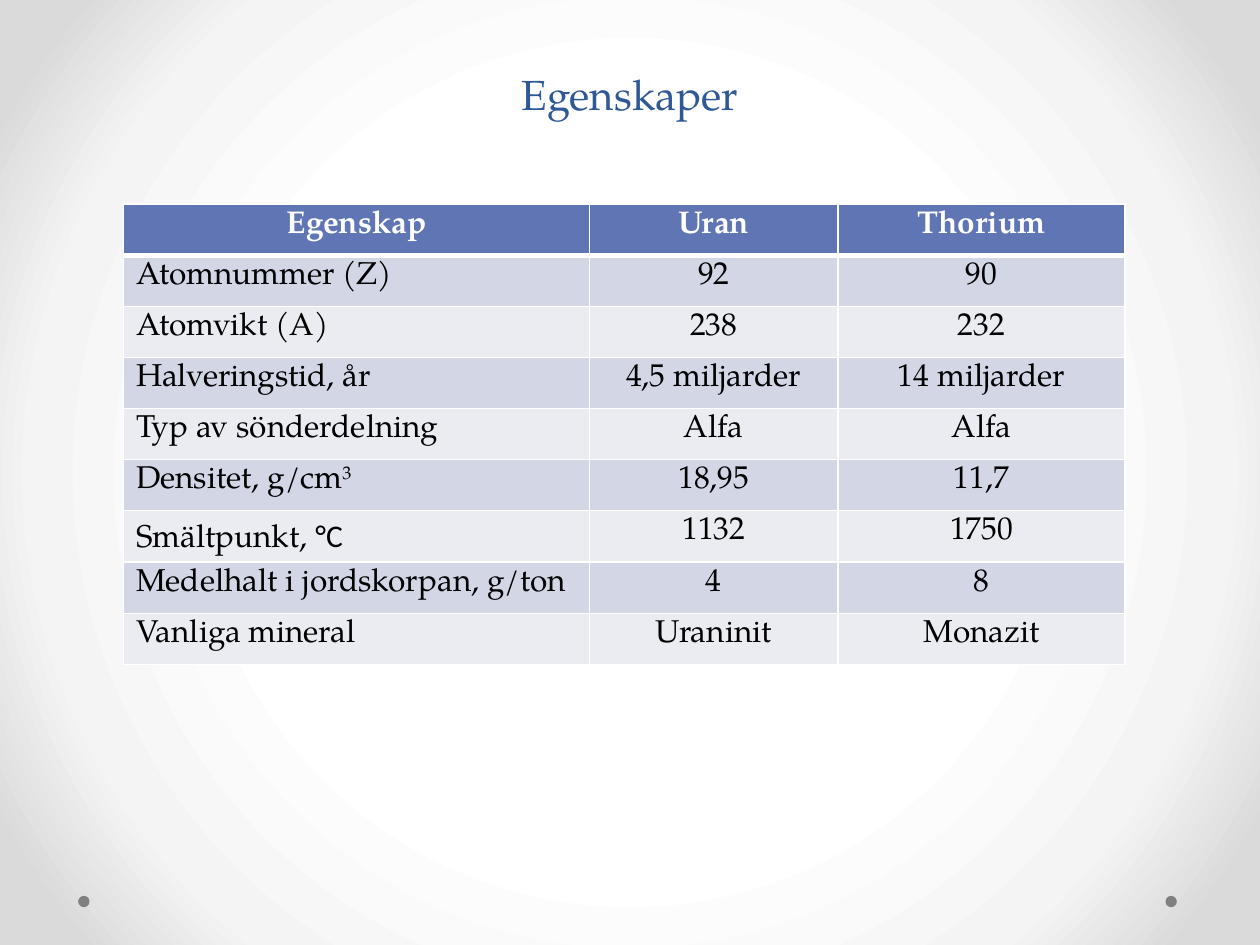
from dataclasses import dataclass

from lxml import etree
from pptx import Presentation
from pptx.dml.color import RGBColor as RGB
from pptx.enum.shapes import MSO_SHAPE as Shape
from pptx.enum.text import MSO_ANCHOR as Anchor, PP_ALIGN as Align
from pptx.oxml import parse_xml
from pptx.oxml.ns import nsdecls, qn
from pptx.util import Inches, Pt


@dataclass(frozen=True)
class Theme:
    font: str = "TeX Gyre Pagella"
    unit_font: str = "Calibri"
    title_size: int = 24
    table_size: int = 18
    title: str = "2F5897"
    header: str = "6076B4"
    bands: tuple = ("D2D6E5", "EAECF2")
    white: str = "FFFFFF"
    black: str = "000000"
    dot: str = "808080"
    backdrop: tuple = ((50, "FFFFFF"), (76, "F4F4F4"), (92, "DADADA"))


THEME = Theme()
WIDTH, HEIGHT = Inches(10), Inches(7.5)
COLUMNS = (3.7, 1.97, 2.28)
ROW_HEIGHT = 3.65 / 9

# A cell is a string, or a pair of main text and specially formatted tail
ROWS = (
    ("Egenskap", "Uran", "Thorium"),
    ("Atomnummer (Z)", "92", "90"),
    ("Atomvikt (A)", "238", "232"),
    ("Halveringstid, år", "4,5 miljarder", "14 miljarder"),
    ("Typ av sönderdelning", "Alfa", "Alfa"),
    (("Densitet, g/cm", "3"), "18,95", "11,7"),
    (("Smältpunkt, ", "°C"), "1132", "1750"),
    ("Medelhalt i jordskorpan, g/ton", "4", "8"),
    ("Vanliga mineral", "Uraninit", "Monazit"),
)


def style_font(font, size, color, bold=False):
    font.name, font.size, font.bold = THEME.font, Pt(size), bold
    font.color.rgb = RGB.from_string(color)


def set_backdrop(slide):
    """Radial gradient, lightest in the middle."""
    stops = "".join(
        f'<a:gs pos="{position * 1000}"><a:srgbClr val="{color}"/></a:gs>'
        for position, color in THEME.backdrop)
    background = parse_xml(
        f'<p:bg {nsdecls("p", "a")}><p:bgPr><a:gradFill rotWithShape="1">'
        f'<a:gsLst>{stops}</a:gsLst><a:path path="circle">'
        '<a:fillToRect l="50000" t="50000" r="50000" b="50000"/></a:path>'
        '</a:gradFill><a:effectLst/></p:bgPr></p:bg>')
    slide.element.cSld.insert(0, background)


def add_dot(slide, left):
    size = Inches(0.09)
    dot = slide.shapes.add_shape(Shape.OVAL, left, Inches(7.11), size, size)
    dot.shadow.inherit = False
    dot.fill.solid()
    dot.fill.fore_color.rgb = RGB.from_string(THEME.dot)
    dot.line.fill.background()


def set_title(slide, text):
    title = slide.shapes.title
    title.left, title.top = int(WIDTH * 0.05), 0
    title.width, title.height = int(WIDTH * 0.9), Inches(0.99)
    frame = title.text_frame
    frame.text = text
    frame.vertical_anchor = Anchor.BOTTOM
    paragraph = frame.paragraphs[0]
    paragraph.alignment = Align.CENTER
    paragraph.line_spacing = Pt(58)
    style_font(paragraph.font, THEME.title_size, THEME.title)


def set_borders(cell, top, bottom):
    """White cell edges; top and bottom widths are in points."""
    properties = cell._tc.get_or_add_tcPr()
    for side, width in (("L", 1), ("R", 1), ("T", top), ("B", bottom)):
        line = etree.SubElement(properties, qn(f"a:ln{side}"), w=str(Pt(width)))
        fill = etree.SubElement(line, qn("a:solidFill"))
        etree.SubElement(fill, qn("a:srgbClr"), val=THEME.white)


def fill_cell(cell, content, row, column):
    is_header = row == 0
    set_borders(cell, top=3 if row == 1 else 1, bottom=3 if is_header else 1)
    color = THEME.header if is_header else THEME.bands[(row - 1) % 2]
    cell.fill.solid()
    cell.fill.fore_color.rgb = RGB.from_string(color)

    paragraph = cell.text_frame.paragraphs[0]
    centred = is_header or column > 0
    paragraph.alignment = Align.CENTER if centred else Align.LEFT
    style_font(paragraph.font, THEME.table_size,
               THEME.white if is_header else THEME.black, is_header)
    main, tail = (content, "") if isinstance(content, str) else content
    paragraph.add_run().text = main
    if tail:
        run = paragraph.add_run()
        run.text = tail
        if tail.isdigit():
            run.font._element.set("baseline", "30000")  # superscript
        else:
            run.font.name = THEME.unit_font


def add_property_table(slide):
    table = slide.shapes.add_table(
        len(ROWS), len(COLUMNS), Inches(0.98), Inches(1.62),
        Inches(sum(COLUMNS)), Inches(ROW_HEIGHT * len(ROWS))).table
    for column, width in zip(table.columns, COLUMNS):
        column.width = Inches(width)
    for row, contents in enumerate(ROWS):
        table.rows[row].height = Inches(ROW_HEIGHT)
        for column, content in enumerate(contents):
            fill_cell(table.cell(row, column), content, row, column)


def main():
    presentation = Presentation()
    presentation.slide_width, presentation.slide_height = WIDTH, HEIGHT
    slide = presentation.slides.add_slide(presentation.slide_layouts[5])
    set_backdrop(slide)
    # Corner dots
    for left in (9.25, 0.62):
        add_dot(slide, Inches(left))
    # Content
    set_title(slide, "Egenskaper")
    add_property_table(slide)
    presentation.save("out.pptx")


if __name__ == "__main__":
    main()
